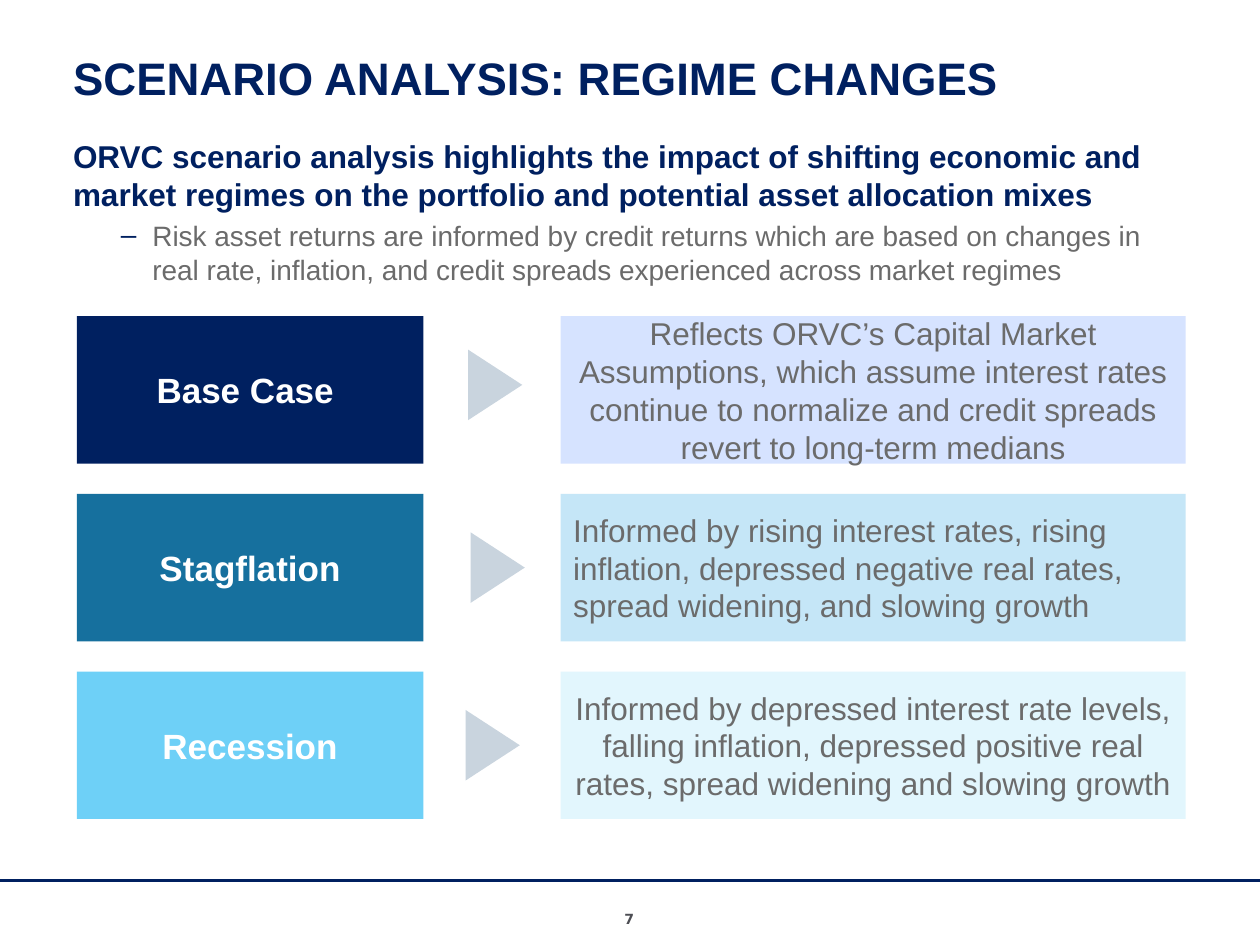
"""Build the scenario analysis slide with three market regimes."""
import dataclasses

import lxml.etree
import pptx
import pptx.dml.color
import pptx.enum.shapes
import pptx.enum.text
import pptx.oxml.ns
import pptx.util

Inches = pptx.util.Inches
Pt = pptx.util.Pt
MSO_SHAPE = pptx.enum.shapes.MSO_SHAPE
ALIGN = pptx.enum.text.PP_ALIGN
ANCHOR = pptx.enum.text.MSO_ANCHOR

COLORS = {
    "navy": "002060",
    "teal": "16709E",
    "sky": "6ED0F7",
    "pale_navy": "D6E3FF",
    "pale_teal": "C5E6F7",
    "pale_sky": "E2F6FD",
    "arrow": "C9D4DE",
    "grey": "6B6B6B",
    "page": "4D4E54",
    "white": "FFFFFF",
}
FORMATS = {
    "title": {"name": "Arial", "size": Pt(26), "bold": True},
    "lead": {"name": "Arial", "size": Pt(18), "bold": True},
    "detail": {"name": "Arial", "size": Pt(16), "bold": False},
    "label": {"name": "Arial", "size": Pt(20), "bold": True},
    "body": {"name": "Arial", "size": Pt(18), "bold": False},
    "page": {"name": "DejaVu Sans", "size": Pt(8), "bold": True},
}
LEFT, WIDTH = 0.58, 8.83
ROW_TOP, ROW_STEP, ROW_HEIGHT = 2.51, 1.41, 1.17


@dataclasses.dataclass
class Regime:
    """One market regime: its label, description, colours and arrow place."""

    label: str
    text: str
    fill: str
    pale: str
    arrow_left: float
    arrow_top: float
    align: ALIGN = ALIGN.CENTER


REGIMES = [
    Regime(
        "Base Case ",
        "Reflects ORVC’s Capital Market Assumptions, which assume interest rates "
        "continue to normalize and credit spreads revert to long-term medians",
        "navy", "pale_navy", 3.65, 2.84,
    ),
    Regime(
        "Stagflation",
        "Informed by rising interest rates, rising inflation, depressed negative "
        "real rates, spread widening, and slowing growth",
        "teal", "pale_teal", 3.67, 4.29, ALIGN.LEFT,
    ),
    Regime(
        "Recession",
        "Informed by depressed interest rate levels, falling inflation, depressed "
        "positive real rates, spread widening and slowing growth",
        "sky", "pale_sky", 3.63, 5.7,
    ),
]


def rgb(color: str) -> pptx.dml.color.RGBColor:
    """Return the named colour."""
    return pptx.dml.color.RGBColor.from_string(COLORS[color])


def write(p, text: str, style: str, color: str, align: ALIGN = ALIGN.LEFT) -> None:
    """Put one formatted run in a paragraph."""
    p.alignment = align
    r = p.add_run()
    r.text = text
    for name, value in FORMATS[style].items():
        setattr(r.font, name, value)
    r.font.color.rgb = rgb(color)


def set_frame(tf, anchor: ANCHOR, left: float = 0.1, right: float = 0.1,
              bottom: float = 0.05) -> None:
    """Set wrapping, anchor and insets of a text frame."""
    values = {
        "word_wrap": True,
        "auto_size": pptx.enum.text.MSO_AUTO_SIZE.NONE,
        "vertical_anchor": anchor,
        "margin_left": Inches(left),
        "margin_right": Inches(right),
        "margin_top": Inches(0.05),
        "margin_bottom": Inches(bottom),
    }
    for name, value in values.items():
        setattr(tf, name, value)


def add_solid(s, kind: MSO_SHAPE, box: tuple[float, ...], color: str):
    """Add a filled shape without outline or shadow."""
    sp = s.shapes.add_shape(kind, *map(Inches, box))
    sp.shadow.inherit = False
    sp.fill.solid()
    sp.fill.fore_color.rgb = rgb(color)
    sp.line.fill.background()
    return sp


def add_panel(s, box: tuple[float, ...], fill: str, text: str, style: str,
              color: str, align: ALIGN) -> None:
    """Add a rectangle with middle-anchored text."""
    tf = add_solid(s, MSO_SHAPE.RECTANGLE, box, fill).text_frame
    set_frame(tf, ANCHOR.MIDDLE)
    write(tf.paragraphs[0], text, style, color, align)


def add_regime(s, regime: Regime, top: float) -> None:
    """Draw one row: label, arrow and description."""
    add_panel(s, (0.61, top, 2.75, ROW_HEIGHT), regime.fill, regime.label,
              "label", "white", ALIGN.CENTER)
    add_panel(s, (4.45, top, 4.96, ROW_HEIGHT), regime.pale, regime.text,
              "body", "grey", regime.align)
    box = (regime.arrow_left, regime.arrow_top, 0.56, 0.43)
    add_solid(s, MSO_SHAPE.ISOSCELES_TRIANGLE, box, "arrow").rotation = 90


def add_text(s, box: tuple[float, ...], **insets: float):
    """Add a wrapping text box and return its frame."""
    tf = s.shapes.add_textbox(*map(Inches, box)).text_frame
    set_frame(tf, ANCHOR.TOP, **insets)
    return tf


def add_dash(p) -> None:
    """Give a paragraph a hanging navy dash."""
    qn = pptx.oxml.ns.qn
    pPr = p._p.get_or_add_pPr()
    pPr.set("marL", str(Inches(0.63)))
    pPr.set("indent", str(Inches(-0.25)))
    clr = lxml.etree.SubElement(pPr, qn("a:buClr"))
    lxml.etree.SubElement(clr, qn("a:srgbClr"), val=COLORS["navy"])
    lxml.etree.SubElement(pPr, qn("a:buFont"), typeface="Arial")
    lxml.etree.SubElement(pPr, qn("a:buChar"), char="‒")


def add_rule(s) -> None:
    """Draw the footer line across the slide."""
    line = s.shapes.add_connector(
        pptx.enum.shapes.MSO_CONNECTOR.STRAIGHT,
        Inches(0), Inches(6.99), Inches(10), Inches(6.99))
    line.line.color.rgb = rgb("navy")
    line.line.width = Pt(1.5)
    lxml.etree.SubElement(line._element.spPr, pptx.oxml.ns.qn("a:effectLst"))


def main() -> None:
    """Build and save the slide."""
    prs = pptx.Presentation()
    prs.slide_width, prs.slide_height = Inches(10), Inches(7.5)
    s = prs.slides.add_slide(prs.slide_layouts[5])
    add_rule(s)

    title = s.shapes.title
    box = {"left": LEFT, "top": 0.01, "width": WIDTH, "height": 0.82}
    for name, value in box.items():
        setattr(title, name, Inches(value))
    set_frame(title.text_frame, ANCHOR.BOTTOM, left=0, right=0, bottom=0)
    p = title.text_frame.paragraphs[0]
    p.line_spacing = Pt(27)
    write(p, "SCENARIO ANALYSIS: REGIME CHANGES", "title", "navy")

    tf = add_text(s, (LEFT, 1.04, WIDTH, 1.35), left=0, right=0)
    write(tf.paragraphs[0],
          "ORVC scenario analysis highlights the impact of shifting economic and "
          "market regimes on the portfolio and potential asset allocation mixes",
          "lead", "navy")
    p = tf.add_paragraph()
    p.level = 1
    p.space_before = Pt(3.2)
    add_dash(p)
    write(p,
          "Risk asset returns are informed by credit returns which are based on "
          "changes in real rate, inflation, and credit spreads experienced across "
          "market regimes", "detail", "grey")

    for i, regime in enumerate(REGIMES):
        add_regime(s, regime, ROW_TOP + i * ROW_STEP)

    tf = add_text(s, (3.83, 7.18, 2.33, 0.24))
    write(tf.paragraphs[0], "7", "page", "page", ALIGN.CENTER)
    prs.save("out.pptx")


if __name__ == "__main__":
    main()
